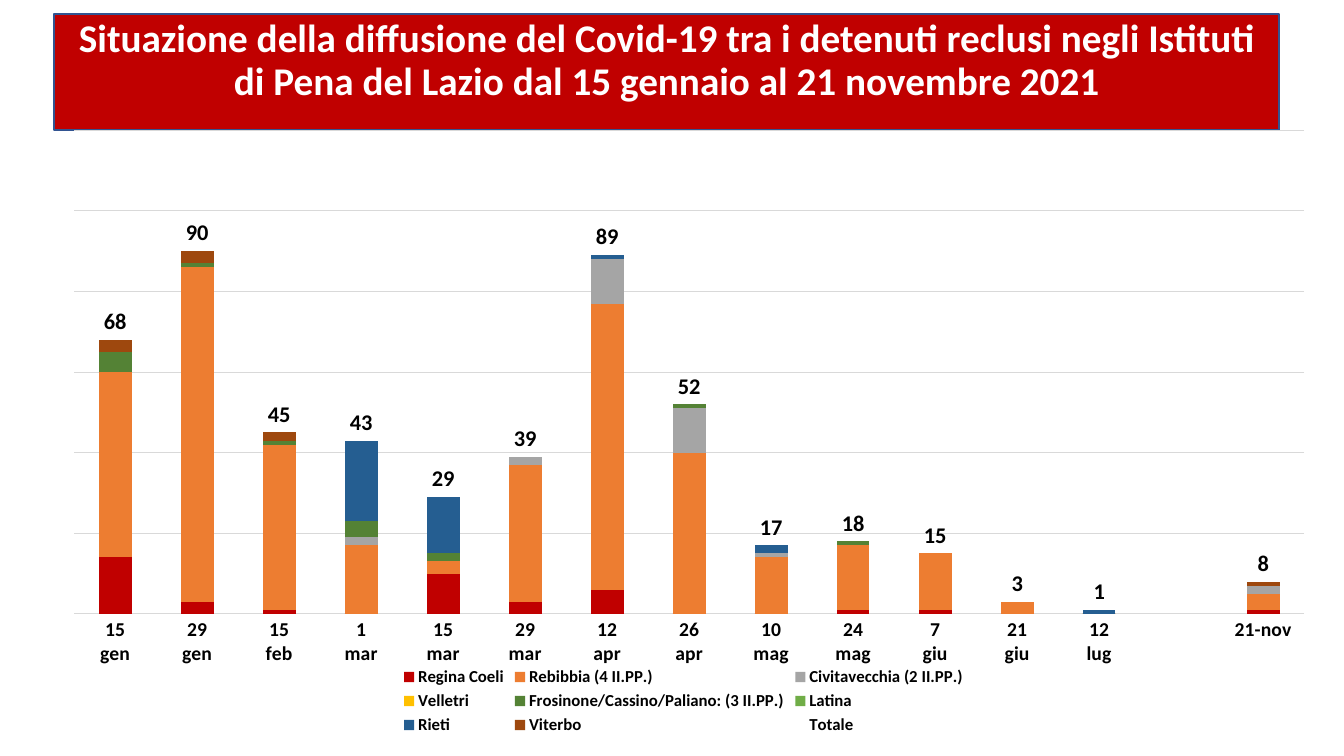
from dataclasses import dataclass

from lxml.etree import SubElement
from pptx import Presentation
from pptx.chart.data import CategoryChartData
from pptx.dml.color import RGBColor
from pptx.enum.chart import (
    XL_CHART_TYPE as ChartType,
    XL_LABEL_POSITION as LabelPosition,
    XL_LEGEND_POSITION as LegendPosition,
    XL_TICK_MARK as TickMark,
)
from pptx.enum.text import MSO_ANCHOR as Anchor, MSO_AUTO_SIZE as AutoSize, PP_ALIGN as Align
from pptx.oxml.ns import qn
from pptx.util import Pt

PX = 914400 / 100.8


@dataclass(frozen=True)
class Theme:
    font: str = "Calibri"
    text: str = "000000"
    title_text: str = "FFFFFF"
    title_fill: str = "C00000"
    title_line: str = "325491"
    grid: str = "D9D9D9"
    title_size: int = 28
    total_size: int = 16
    axis_size: int = 14
    legend_size: int = 12
    chart_size: int = 10


THEME = Theme()
SLIDE_SIZE = (1344, 756)
TITLE_BOX = (54, 14, 1225, 116)
CHART_BOX = (54, 129, 1259, 610)
PLOT_LAYOUT = {"x": 0.016, "y": 0.002, "w": 0.977, "h": 0.793}

TITLE = ("Situazione della diffusione del Covid-19 tra i detenuti reclusi negli Istituti "
         "di Pena del Lazio dal 15 gennaio al 21 novembre 2021")
DATES = ["15\ngen", "29\ngen", "15\nfeb", "1\nmar", "15\nmar", "29\nmar", "12\napr", "26\napr",
         "10\nmag", "24\nmag", "7\ngiu", "21\ngiu", "12\nlug", "", "21-nov"]
NO_CASES = [0] * 13 + [None, 0]
PRISONS = [
    ("Regina Coeli", "C00000", [14, 3, 1, 0, 10, 3, 6, 0, 0, 1, 1, 0, 0, None, 1]),
    ("Rebibbia (4 II.PP.)", "ED7D31", [46, 83, 41, 17, 3, 34, 71, 40, 14, 16, 14, 3, 0, None, 4]),
    ("Civitavecchia (2 II.PP.)", "A5A5A5", [0, 0, 0, 2, 0, 2, 11, 11, 1, 0, 0, 0, 0, None, 2]),
    ("Velletri", "FFC000", NO_CASES),
    ("Frosinone/Cassino/Paliano: (3 II.PP.)", "548235",
     [5, 1, 1, 4, 2, 0, 0, 1, 0, 1, 0, 0, 0, None, 0]),
    ("Latina", "70AD47", NO_CASES),
    ("Rieti", "255E91", [0, 0, 0, 20, 14, 0, 1, 0, 2, 0, 0, 0, 1, None, 0]),
    ("Viterbo", "9E480E", [3, 3, 2, 0, 0, 0, 0, 0, 0, 0, 0, 0, 0, None, 1]),
]
TOTALS = [68, 90, 45, 43, 29, 39, 89, 52, 17, 18, 15, 3, 1, None, 8]


def px(length):
    return round(length * PX)


def set_font(font, size, color=THEME.text, bold=True):
    font.name = THEME.font
    font.size = Pt(size)
    font.bold = bold
    font.color.rgb = RGBColor.from_string(color)


def set_fill(fill, color):
    fill.solid()
    fill.fore_color.rgb = RGBColor.from_string(color)


def set_line(line, color, width):
    set_fill(line.fill, color)
    line.width = Pt(width)


def place_title(slide, box):
    title = slide.shapes.title
    title.left, title.top, title.width, title.height = map(px, box)
    set_fill(title.fill, THEME.title_fill)
    set_line(title.line, THEME.title_line, 1)
    frame = title.text_frame
    frame.text = TITLE
    frame.word_wrap = True
    frame.auto_size = AutoSize.NONE
    frame.vertical_anchor = Anchor.TOP
    paragraph = frame.paragraphs[0]
    paragraph.alignment = Align.CENTER
    paragraph.line_spacing = 0.9
    paragraph.space_before = Pt(10)
    set_font(paragraph.font, THEME.title_size, THEME.title_text)


def set_plot_layout(chart):
    """Fix the inner plot area as fractions of the chart."""
    plot_area = chart._chartSpace.chart.plotArea
    for old in plot_area.findall(qn("c:layout")):
        plot_area.remove(old)
    layout = SubElement(plot_area, qn("c:layout"))
    plot_area.insert(0, layout)
    manual = SubElement(layout, qn("c:manualLayout"))
    settings = {"layoutTarget": "inner", "xMode": "edge", "yMode": "edge", **PLOT_LAYOUT}
    for tag, value in settings.items():
        SubElement(manual, qn(f"c:{tag}")).set("val", str(value))


def format_axes(chart):
    dates = chart.category_axis
    dates.major_tick_mark = dates.minor_tick_mark = TickMark.NONE
    set_font(dates.tick_labels.font, THEME.axis_size)
    set_line(dates.format.line, THEME.grid, 0.75)
    cases = chart.value_axis
    cases.minimum_scale, cases.maximum_scale, cases.major_unit = 0, 120, 20
    cases.has_major_gridlines = True
    set_line(cases.major_gridlines.format.line, THEME.grid, 0.75)
    cases.visible = False


def format_total(series):
    """Leave the stacked total unfilled, so only its labels stand above the bars."""
    series.format.fill.background()
    series.format.line.fill.background()
    labels = series.data_labels
    labels.show_value = True
    labels.position = LabelPosition.INSIDE_BASE
    set_font(labels.font, THEME.total_size)


def place_chart(slide, box):
    data = CategoryChartData()
    data.categories = DATES
    for name, _, values in PRISONS:
        data.add_series(name, values)
    data.add_series("Totale", TOTALS)
    chart = slide.shapes.add_chart(ChartType.COLUMN_STACKED, *map(px, box), data).chart
    chart.has_title = False
    set_font(chart.font, THEME.chart_size, bold=False)
    set_plot_layout(chart)
    format_axes(chart)

    plot = chart.plots[0]
    plot.gap_width, plot.overlap = 150, 100
    plot.vary_by_categories = False
    *prisons, total = plot.series
    for series, (_, color, _) in zip(prisons, PRISONS):
        set_fill(series.format.fill, color)
    format_total(total)

    chart.has_legend = True
    chart.legend.position = LegendPosition.BOTTOM
    chart.legend.include_in_layout = False
    set_font(chart.legend.font, THEME.legend_size)


def main():
    presentation = Presentation()
    presentation.slide_width, presentation.slide_height = map(px, SLIDE_SIZE)
    slide = presentation.slides.add_slide(presentation.slide_layouts.get_by_name("Title Only"))
    place_title(slide, TITLE_BOX)
    place_chart(slide, CHART_BOX)
    presentation.save("out.pptx")


if __name__ == "__main__":
    main()
